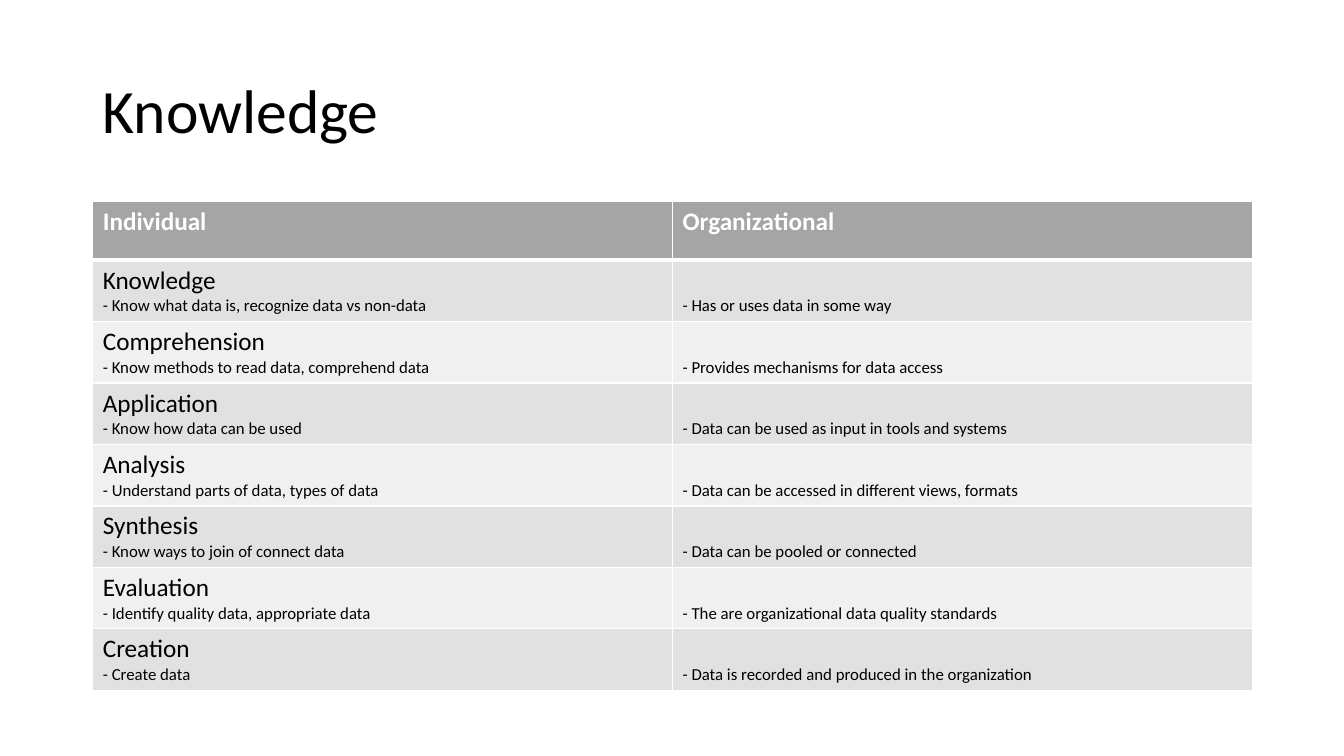
from lxml import etree
from pptx import Presentation
from pptx.dml.color import RGBColor
from pptx.enum.text import MSO_ANCHOR
from pptx.oxml.ns import qn
from pptx.util import Inches, Pt

TOP, MIDDLE, BOTTOM = MSO_ANCHOR.TOP, MSO_ANCHOR.MIDDLE, MSO_ANCHOR.BOTTOM
COLORS = {"text": "000000", "white": "FFFFFF", "header": "A5A5A5",
          "odd": "E1E1E1", "even": "F0F0F0"}
HEADINGS = ["Individual", "Organizational"]
LEVELS = [
    ("Knowledge", "Know what data is, recognize data vs non-data",
     "Has or uses data in some way"),
    ("Comprehension", "Know methods to read data, comprehend data",
     "Provides mechanisms for data access"),
    ("Application", "Know how data can be used",
     "Data can be used as input in tools and systems"),
    ("Analysis", "Understand parts of data, types of data",
     "Data can be accessed in different views, formats"),
    ("Synthesis", "Know ways to join of connect data",
     "Data can be pooled or connected"),
    ("Evaluation", "Identify quality data, appropriate data",
     "The are organizational data quality standards"),
    ("Creation", "Create data",
     "Data is recorded and produced in the organization"),
]


def write(paragraph, text, size=12, color="text", bold=False):
    run = paragraph.add_run()
    run.text = text
    run.font.name = "Calibri"
    run.font.size = Pt(size)
    run.font.bold = bold
    run.font.color.rgb = RGBColor.from_string(COLORS[color])


def style_cell(cell, fill, anchor, edges):
    cell.fill.solid()
    cell.fill.fore_color.rgb = RGBColor.from_string(COLORS[fill])
    cell.vertical_anchor = anchor
    properties = cell._tc.get_or_add_tcPr()
    # Border lines come before the fill, in this order
    for position, (edge, width) in enumerate(edges.items()):
        line = etree.Element(qn(f"a:{edge}"), w=str(Pt(width)))
        solid = etree.SubElement(line, qn("a:solidFill"))
        etree.SubElement(solid, qn("a:srgbClr"), val=COLORS["white"])
        properties.insert(position, line)


prs = Presentation()
prs.slide_width, prs.slide_height = Inches(13.33), Inches(7.5)
slide = prs.slides.add_slide(prs.slide_layouts[6])

# Grid
left, width = Inches(0.92), Inches(11.5)
header_height, level_height = Inches(0.58), Inches(0.61)

# Title
title = slide.shapes.add_textbox(left, Inches(0.4), width, Inches(1.45)).text_frame
title.word_wrap = True
title.vertical_anchor = MIDDLE
title.paragraphs[0].line_spacing = 0.9
write(title.paragraphs[0], "Knowledge", size=44)

# Table of knowledge levels
levels_table = slide.shapes.add_table(
    len(LEVELS) + 1, len(HEADINGS), left, Inches(2), width,
    header_height + level_height * len(LEVELS)).table
for row in levels_table.rows:
    row.height = level_height
levels_table.rows[0].height = header_height

# Header row
for column, heading in enumerate(HEADINGS):
    cell = levels_table.cell(0, column)
    write(cell.text_frame.paragraphs[0], heading, size=18, color="white", bold=True)
    style_cell(cell, "header", TOP, {"lnL": 1, "lnR": 1, "lnT": 1, "lnB": 3})

# One row per level, the organizational text set on the bottom line
for number, (level, individual, organizational) in enumerate(LEVELS, start=1):
    fill = "odd" if number % 2 else "even"
    edges = {"lnL": 1, "lnR": 1, "lnT": 3 if number == 1 else 1, "lnB": 1}
    person, organization = levels_table.cell(number, 0), levels_table.cell(number, 1)
    write(person.text_frame.paragraphs[0], level, size=18)
    write(person.text_frame.add_paragraph(), f"- {individual}")
    write(organization.text_frame.paragraphs[0], f"- {organizational}")
    style_cell(person, fill, TOP, edges)
    style_cell(organization, fill, BOTTOM, edges)

prs.save("out.pptx")
